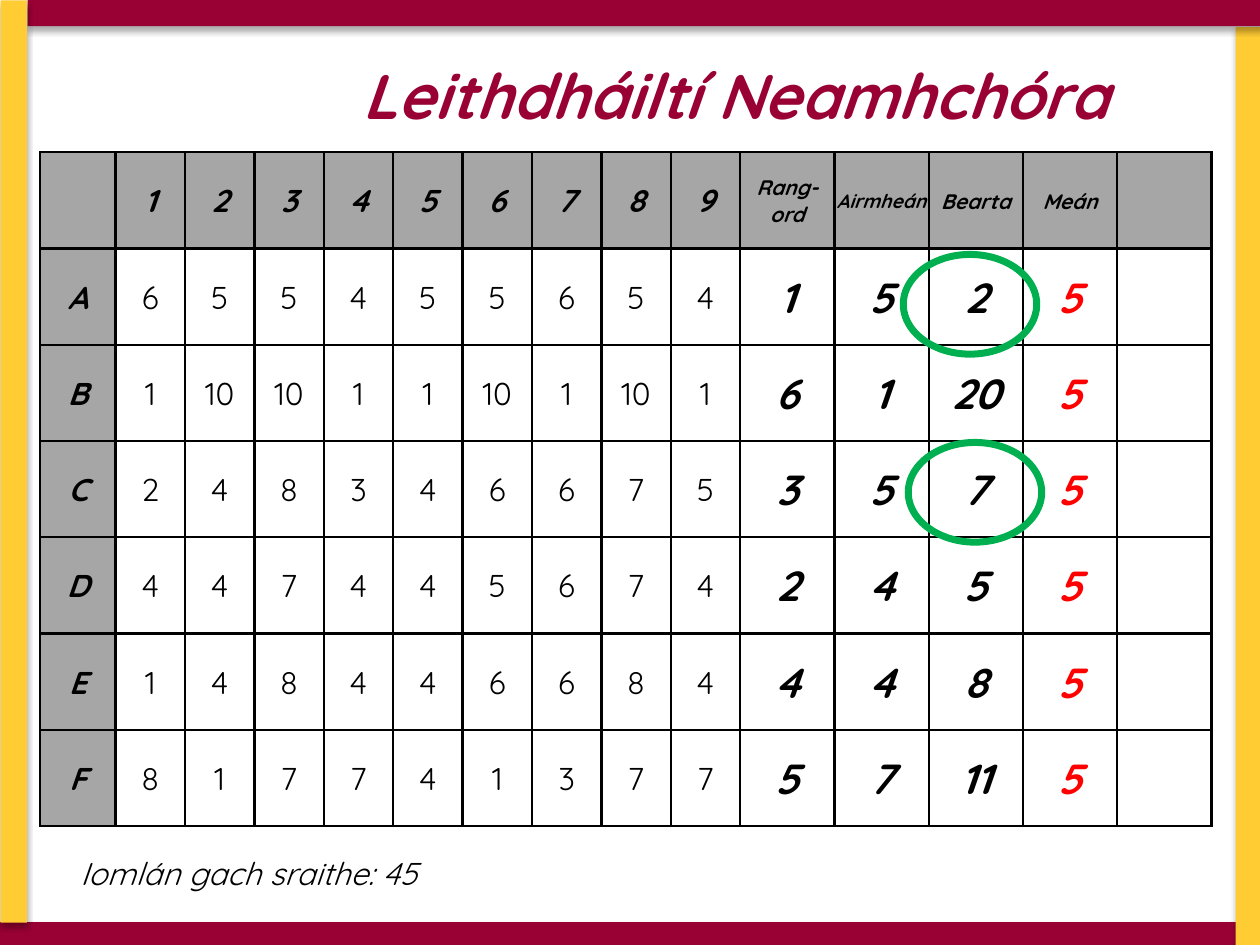
"""Build the slide with the table of unfair allocations."""
from lxml.etree import SubElement as Sub
from pptx import Presentation
from pptx.dml.color import RGBColor
from pptx.enum.shapes import MSO_SHAPE as Kind
from pptx.enum.text import MSO_ANCHOR as Anchor, PP_ALIGN as Align
from pptx.oxml.ns import qn
from pptx.util import Cm, Pt

FONT = "Quicksand"
MAROON = RGBColor(0x99, 0x00, 0x33)
GOLD = RGBColor(0xFF, 0xCC, 0x33)
GREY = RGBColor(0xA6, 0xA6, 0xA6)
BLACK = RGBColor(0, 0, 0)
RED = RGBColor(0xFF, 0, 0)
GREEN = RGBColor(0x00, 0xB0, 0x50)


def style(para, size, color, bold, slant):
    for run in para.runs:
        font = run.font
        font.name, font.size = FONT, Pt(size)
        font.bold, font.italic = bold, slant
        font.color.rgb = color


def tint(parent, color):
    fill = Sub(parent, qn("a:solidFill"))
    return Sub(fill, qn("a:srgbClr"), val=str(color))


deck = Presentation()
deck.slide_width, deck.slide_height = Cm(25.4), Cm(19.05)
slide = deck.slides.add_slide(deck.slide_layouts[6])
shapes = slide.shapes

bars = [
    (0, 18.59, 25.4, 0, MAROON),
    (15.88, 9.58, 18.59, 90, GOLD),
    (0.56, 0, 24.89, 0, MAROON),
    (-9.02, 9.04, 18.59, 90, GOLD),
]
for left, top, width, turn, color in bars:
    bar = shapes.add_shape(Kind.RECTANGLE, Cm(left), Cm(top), Cm(width), Cm(0.53))
    bar.rotation = turn
    bar.fill.solid()
    bar.fill.fore_color.rgb = color
    bar.line.fill.background()
    bar.shadow.inherit = False
    effects = bar.element.spPr.find(qn("a:effectLst"))
    shade = Sub(effects, qn("a:outerShdw"), blurRad=str(Pt(3.5)),
                dist=str(Pt(2.2)), dir="5400000", rotWithShape="0")
    tone = Sub(shade, qn("a:srgbClr"), val=str(BLACK))
    Sub(tone, qn("a:alpha"), val="32000")

heads = ["", *"123456789", "Rang-ord", "Airmheán", "Bearta", "Meán", ""]
rows = [
    heads,
    ["A", 6, 5, 5, 4, 5, 5, 6, 5, 4, 1, 5, 2, 5, ""],
    ["B", 1, 10, 10, 1, 1, 10, 1, 10, 1, 6, 1, 20, 5, ""],
    ["C", 2, 4, 8, 3, 4, 6, 6, 7, 5, 3, 5, 7, 5, ""],
    ["D", 4, 4, 7, 4, 4, 5, 6, 7, 4, 2, 4, 5, 5, ""],
    ["E", 1, 4, 8, 4, 4, 6, 6, 8, 4, 4, 4, 8, 5, ""],
    ["F", 8, 1, 7, 7, 4, 1, 3, 7, 7, 5, 7, 11, 5, ""],
]
widths = [1.52] + [1.4] * 9 + [1.9] * 5
high = 1.94
frame = shapes.add_table(len(rows), len(heads), Cm(0.81), Cm(3.07),
                         Cm(sum(widths)), Cm(high * len(rows)))
table = frame.table
table.first_row = table.horz_banding = False
for col, width in zip(table.columns, widths):
    col.width = Cm(width)

for r, row in enumerate(rows):
    table.rows[r].height = Cm(high)
    for c, value in enumerate(row):
        cell = table.cell(r, c)
        cell.text_frame.text = str(value)
        cell.vertical_anchor = Anchor.MIDDLE
        cell.margin_left = cell.margin_right = cell.margin_top = Cm(0.03)
        cell.margin_bottom = 0
        para = cell.text_frame.paragraphs[0]
        para.alignment = Align.CENTER
        stat = c > 9
        if r == 0 and stat:
            size = 11 if value == "Airmheán" else 12
        else:
            size = 24 if stat else 18
        strong = r == 0 or c == 0 or stat
        style(para, size, RED if r and c == 13 else BLACK, strong, strong)
        props = cell._tc.get_or_add_tcPr()
        for side in ("lnL", "lnR", "lnT", "lnB"):
            tint(Sub(props, qn("a:" + side), w=str(Pt(1.5))), BLACK)
        if r == 0 or c == 0:
            cell.fill.solid()
            cell.fill.fore_color.rgb = GREY
        else:
            cell.fill.background()

labels = [
    ("Leithdháiltí Neamhchóra", 7.06, 1.02, 15.75, 1.8, 36, MAROON, True, False),
    ("Iomlán gach sraithe: 45", 1.37, 17.09, 8.31, 1.02, 18, BLACK, False, True),
]
for text, left, top, width, height, size, color, bold, wrap in labels:
    box = shapes.add_textbox(Cm(left), Cm(top), Cm(width), Cm(height))
    box.text_frame.word_wrap = wrap
    box.text_frame.text = text
    style(box.text_frame.paragraphs[0], size, color, bold, True)

for left, top in [(18.21, 5.13), (18.31, 8.92)]:
    ring = shapes.add_shape(Kind.OVAL, Cm(left), Cm(top), Cm(2.69), Cm(2.01))
    ring.fill.background()
    ring.line.color.rgb = GREEN
    ring.line.width = Pt(4)
    ring.shadow.inherit = False

deck.save("out.pptx")
